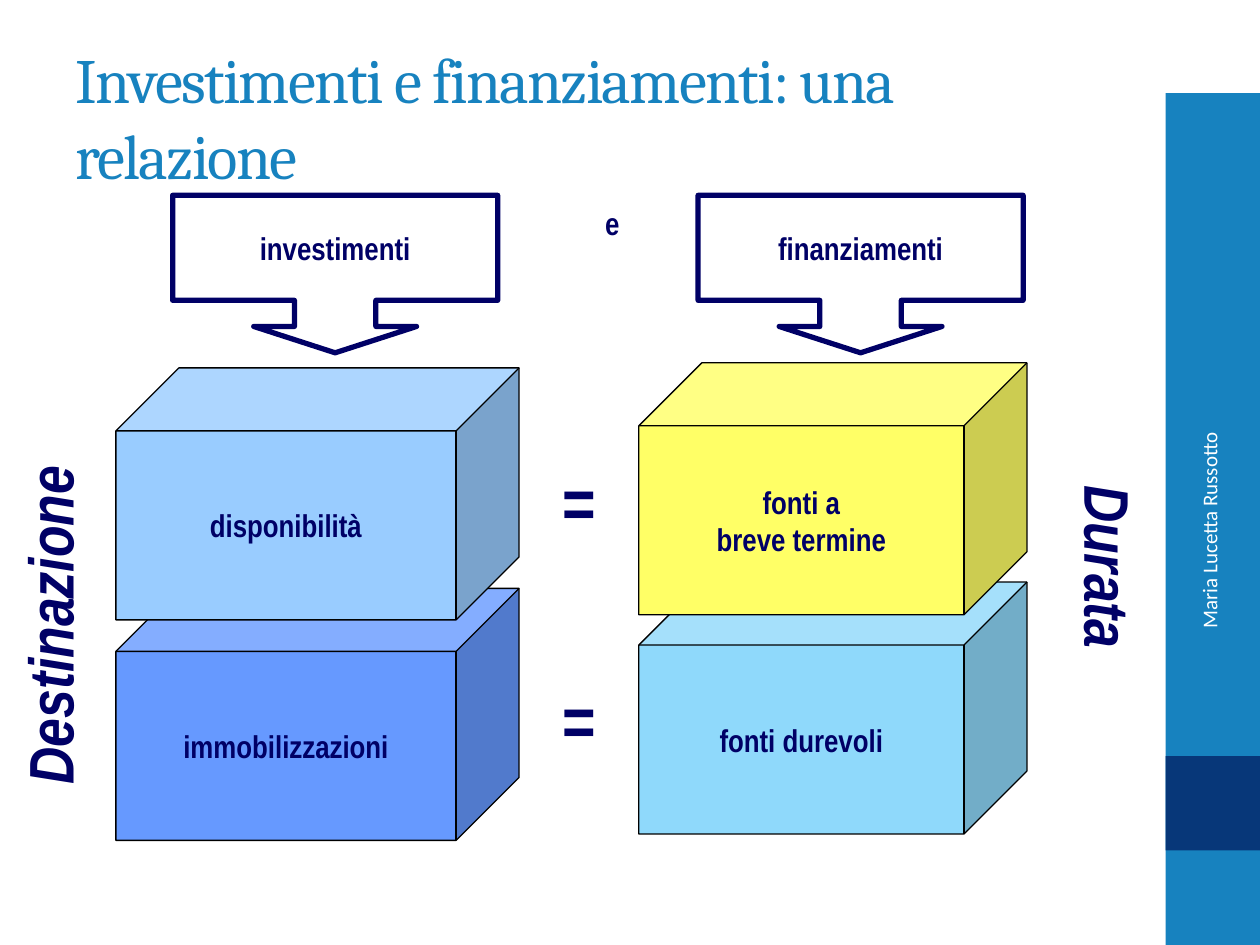
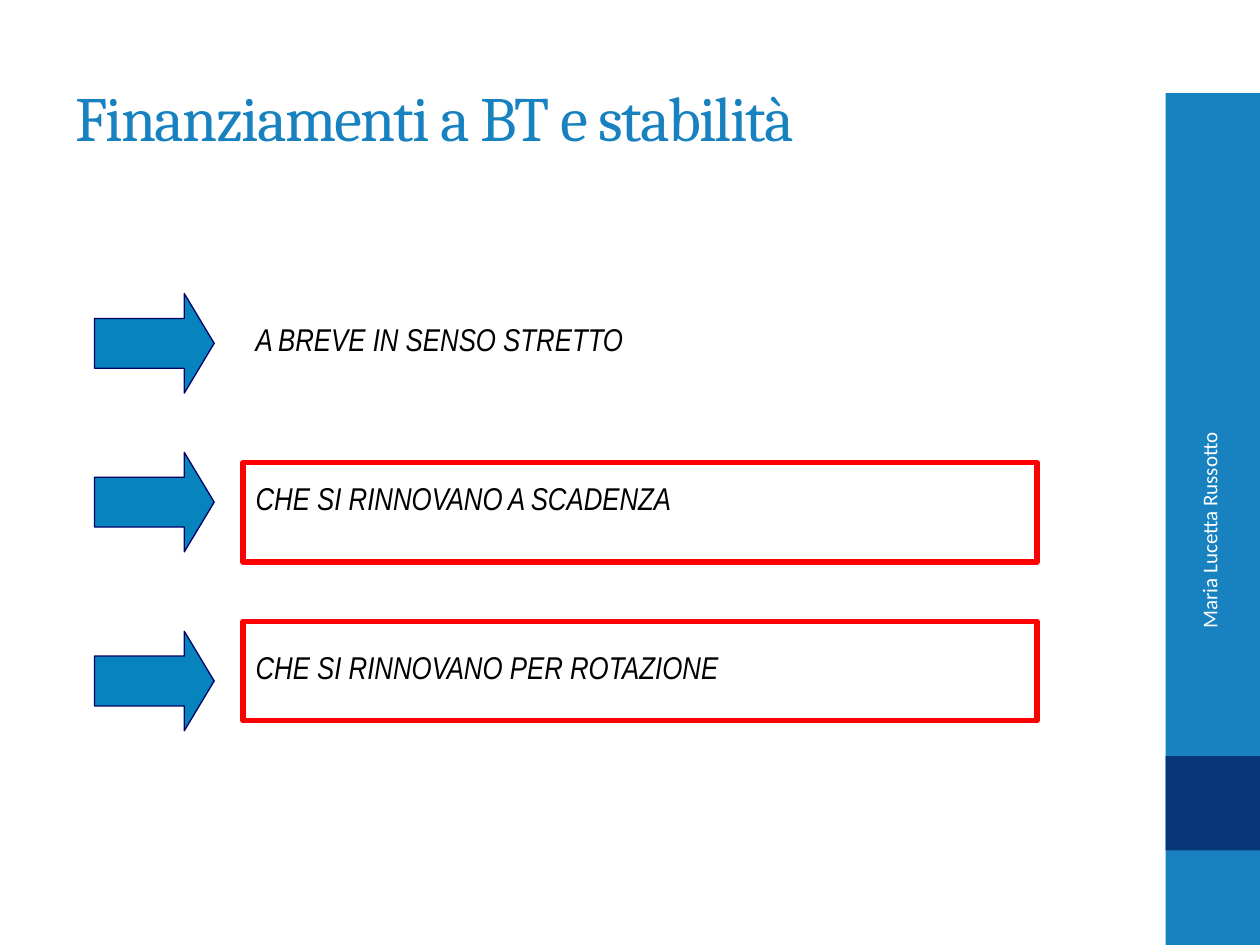
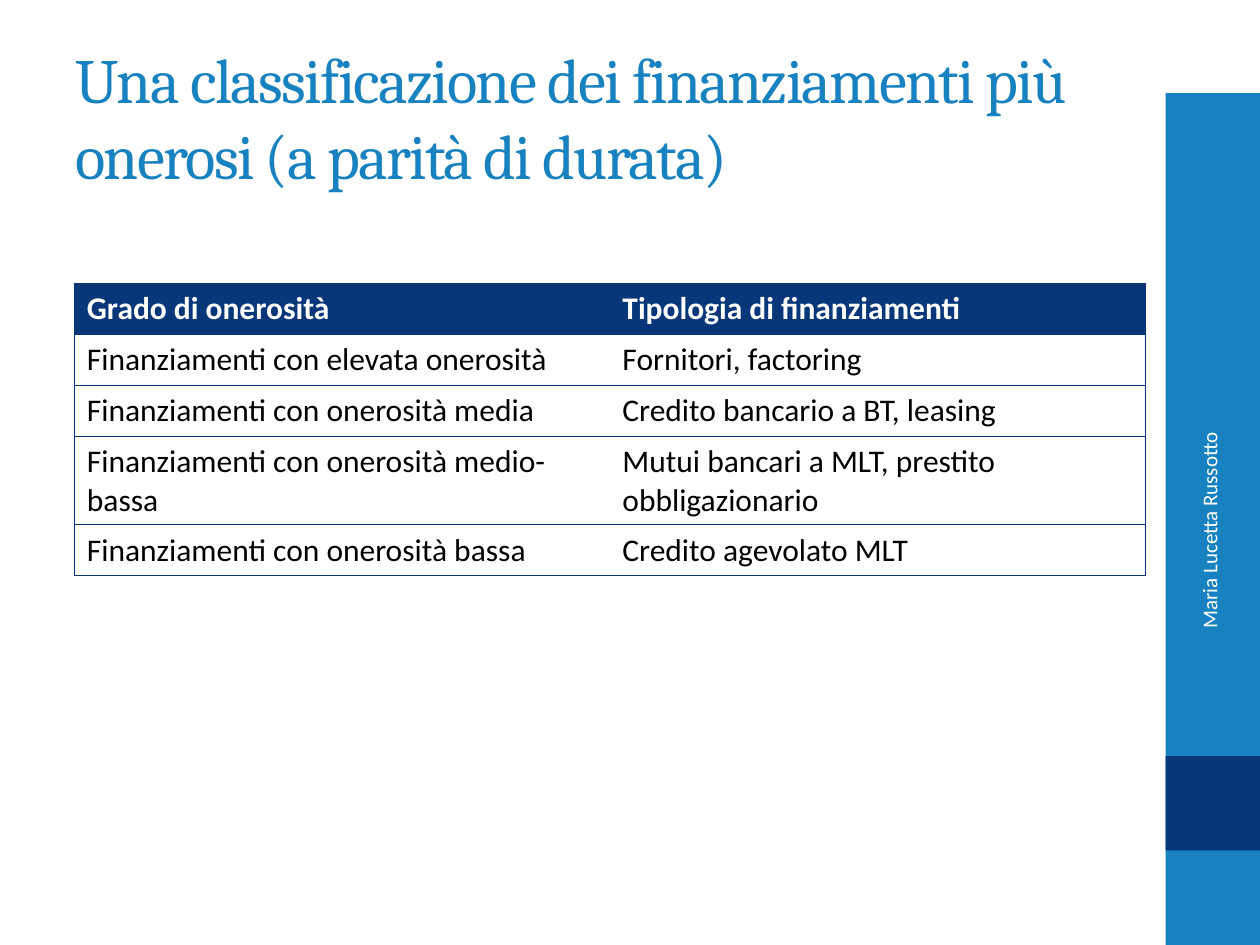
from lxml import etree
from pptx import Presentation, util as u
from pptx.dml.color import RGBColor
from pptx.enum import shapes, text
from pptx.oxml.ns import qn

COLUMNS, ROWS = 40, 30
SHAPE = shapes.MSO_SHAPE
LEFT, CENTER, RIGHT = text.PP_ALIGN.LEFT, text.PP_ALIGN.CENTER, text.PP_ALIGN.RIGHT
TOP, MIDDLE = text.MSO_ANCHOR.TOP, text.MSO_ANCHOR.MIDDLE
BLUE, NAVY, INK, EDGE = "1782BF", "073779", "000066", "043579"
WHITE, BLACK, RED = "FFFFFF", "000000", "FF0000"
NARROW, BODY, HEADING = "Arial Narrow", "Calibri", "Cambria"
AUTHOR = "Maria Lucetta Russotto"


def color(value):
    return RGBColor.from_string(value)


class SlideBuilder:
    def __init__(self):
        self.deck = Presentation()
        self.deck.slide_width, self.deck.slide_height = u.Inches(10), u.Inches(7.5)
        self.page = None

    def place(self, left, top, width, height):
        column = self.deck.slide_width / COLUMNS
        row = self.deck.slide_height / ROWS
        return [round(n) for n in (left * column, top * row, width * column, height * row)]

    def start(self, title):
        self.page = self.deck.slides.add_slide(self.deck.slide_layouts[6])
        self.shape(SHAPE.RECTANGLE, (37, 2.96, 3, 27.04), BLUE)
        self.shape(SHAPE.RECTANGLE, (37, 24, 3, 3), NAVY)
        self.label(title, (2, 1.2, 33.32, 5), font=HEADING, size=36, ink=BLUE,
                   bold=False, align=LEFT, anchor=MIDDLE, spacing=-100)
        self.label(AUTHOR, (33.2, 17.72, 10.36, 1.6), font=BODY, size=12, ink=WHITE,
                   bold=False, align=RIGHT, anchor=MIDDLE, turn=270)

    def span(self, para, content, font=NARROW, size=18, ink=INK, bold=True,
             italic=False, spacing=0):
        span = para.add_run()
        span.text = content
        span.font.name, span.font.size = font, u.Pt(size)
        span.font.bold, span.font.italic = bold, italic
        span.font.color.rgb = color(ink)
        if spacing:
            span._r.get_or_add_rPr().set("spc", str(spacing))

    def lines(self, frame, content, align=CENTER, anchor=MIDDLE, wrap=False, **style):
        frame.word_wrap, frame.vertical_anchor = wrap, anchor
        for index, line in enumerate(content.split("\n")):
            para = frame.add_paragraph() if index else frame.paragraphs[0]
            para.alignment = align
            self.span(para, line, **style)

    def label(self, content, area, align=CENTER, anchor=TOP, wrap=True, turn=0, **style):
        box = self.page.shapes.add_textbox(*self.place(*area))
        box.rotation = turn
        self.lines(box.text_frame, content, align, anchor, wrap, **style)

    def shape(self, kind, area, fill=None, line=None, weight=0.75, adjust=(), content=None):
        shape = self.page.shapes.add_shape(kind, *self.place(*area))
        shape.shadow.inherit = False
        for index, value in enumerate(adjust):
            shape.adjustments[index] = value
        if fill:
            shape.fill.solid()
            shape.fill.fore_color.rgb = color(fill)
        else:
            shape.fill.background()
        if line:
            shape.line.color.rgb = color(line)
            shape.line.width = u.Pt(weight)
        else:
            shape.line.fill.background()
        if content:
            self.lines(shape.text_frame, content)

    def border(self, cell, side, visible):
        edge = etree.SubElement(cell._tc.get_or_add_tcPr(), qn(f"a:ln{side}"))
        if visible:
            edge.set("w", str(u.Pt(1)))
            fill = etree.SubElement(edge, qn("a:solidFill"))
            etree.SubElement(fill, qn("a:srgbClr"), val=EDGE)
        else:
            edge.set("w", "0")
            etree.SubElement(edge, qn("a:noFill"))

    def table(self, records, area):
        count, last = len(records), len(records[0]) - 1
        grid = self.page.shapes.add_table(count, last + 1, *self.place(*area)).table
        grid.horz_banding = False
        for r, record in enumerate(records):
            for c, content in enumerate(record):
                cell, header = grid.cell(r, c), r == 0
                for side, visible in (("L", c == 0), ("R", c == last), ("T", True), ("B", True)):
                    self.border(cell, side, visible)
                if header:
                    cell.fill.solid()
                    cell.fill.fore_color.rgb = color(NAVY)
                else:
                    cell.fill.background()
                self.span(cell.text_frame.paragraphs[0], content, font=BODY,
                          ink=WHITE if header else BLACK, bold=header)


def relation_slide(builder):
    builder.start("Investimenti e finanziamenti: una relazione")
    builder.label("e", (18.68, 6.28, 1.52, 2.28), wrap=False)
    for content, left in (("investimenti", 5.48), ("finanziamenti", 22.16)):
        builder.shape(SHAPE.DOWN_ARROW_CALLOUT, (left, 6.2, 10.32, 5), line=INK, weight=3,
                      adjust=(0.517, 0.517, 0.167, 0.667), content=content)
    cubes = (
        ("immobilizzazioni", 3.68, 18.68, 12.8, "6699FF"),
        ("disponibilità", 3.68, 11.68, 12.8, "99CCFF"),
        ("fonti durevoli", 20.28, 18.48, 12.32, "8FD9FB"),
        ("fonti a\nbreve termine", 20.28, 11.52, 12.32, "FFFF66"),
    )
    for content, left, top, width, fill in cubes:
        builder.shape(SHAPE.CUBE, (left, top, width, 8), fill, BLACK,
                      adjust=(0.25,), content=content)
    for top in (14.36, 21.28):
        builder.label("=", (17.44, top, 1.88, 3.08), size=40, wrap=False)
    builder.label("Destinazione", (-3.92, 18.44, 10.92, 2.8), size=36, italic=True,
                  align=LEFT, wrap=False, turn=270)
    builder.label("Durata", (30.96, 16.6, 8.52, 2.8), size=36, italic=True, turn=90)


def stability_slide(builder):
    builder.start("Finanziamenti a BT e stabilità")
    kinds = (
        ("A BREVE IN SENSO STRETTO", 9.96, 9.32),
        ("CHE SI RINNOVANO A SCADENZA", 15, 14.36),
        ("CHE SI RINNOVANO PER ROTAZIONE", 20.36, 20.04),
    )
    for content, text_top, arrow_top in kinds:
        builder.label(content, (7.72, text_top, 25.2, 1.6), ink=BLACK, bold=False,
                      italic=True, align=LEFT)
        builder.shape(SHAPE.RIGHT_ARROW, (3, arrow_top, 3.8, 3.16), "0784BE", INK,
                      adjust=(0.5, 0.3))
    for top in (14.68, 19.72):
        builder.shape(SHAPE.RECTANGLE, (7.72, top, 25.2, 3.16), line=RED, weight=3)


def cost_slide(builder):
    builder.start("Una classificazione dei finanziamenti più onerosi (a parità di durata)")
    builder.table((
        ("Grado di onerosità", "Tipologia di finanziamenti"),
        ("Finanziamenti con elevata onerosità", "Fornitori, factoring"),
        ("Finanziamenti con onerosità media", "Credito bancario a BT, leasing"),
        ("Finanziamenti con onerosità medio-bassa",
         "Mutui bancari a MLT, prestito obbligazionario"),
        ("Finanziamenti con onerosità bassa", "Credito agevolato MLT"),
    ), (2.36, 9, 34, 8.1))


def main():
    builder = SlideBuilder()
    for build in (relation_slide, stability_slide, cost_slide):
        build(builder)
    builder.deck.save("out.pptx")


if __name__ == "__main__":
    main()
